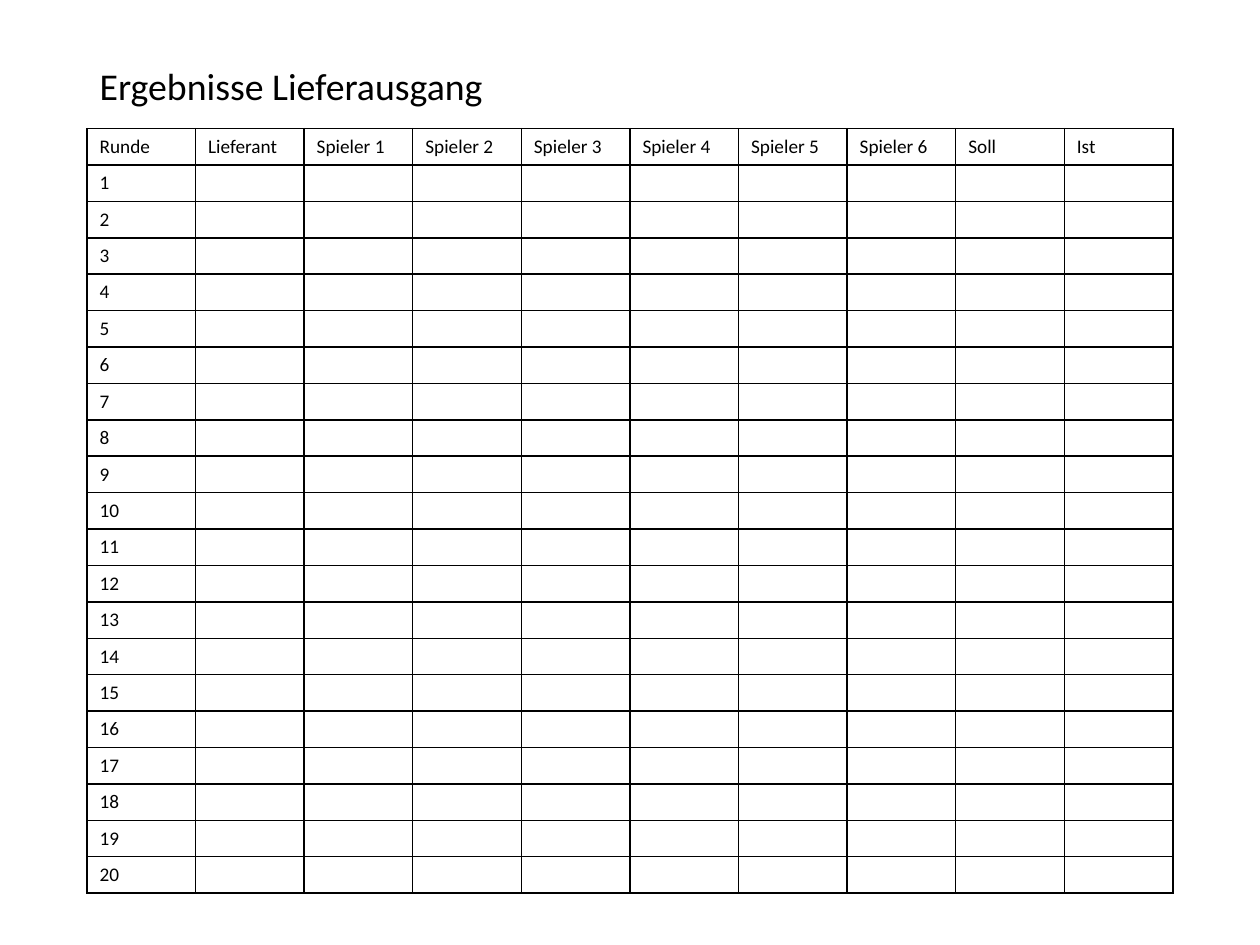
from lxml import etree
from pptx import Presentation
from pptx import util as u
from pptx.dml.color import RGBColor
from pptx.enum import text
from pptx.oxml import ns

BLACK = RGBColor(0, 0, 0)
WHITE = RGBColor(255, 255, 255)
TITLE_ONLY = 5

HEADINGS = ["Runde", "Lieferant",
            *(f"Spieler {player}" for player in range(1, 7)),
            "Soll", "Ist"]
ROUNDS = 20


class ScoreSheet:
    """Holds the style and the current slide."""

    font = "Calibri"
    left, width = u.Inches(0.69), u.Inches(8.62)

    def __init__(self, deck):
        self.page = deck.slides.add_slide(deck.slide_layouts[TITLE_ONLY])

    def style(self, para, size):
        para.font.name = self.font
        para.font.size = u.Pt(size)
        para.font.color.rgb = BLACK

    def title(self, wording, top, height):
        box = self.page.shapes.title
        box.left, box.top = self.left, u.Inches(top)
        box.width, box.height = self.width, u.Inches(height)
        frame = box.text_frame
        frame.text = wording
        frame.word_wrap = True
        frame.auto_size = text.MSO_AUTO_SIZE.NONE
        frame.vertical_anchor = text.MSO_ANCHOR.MIDDLE
        para = frame.paragraphs[0]
        para.alignment = text.PP_ALIGN.LEFT
        para.line_spacing = 0.9
        self.style(para, 21.6)

    def table(self, rows, top, height, row_height):
        frame = self.page.shapes.add_table(
            len(rows), len(rows[0]), self.left, u.Inches(top),
            self.width, u.Inches(height))
        table = frame.table
        table.first_row = table.horz_banding = False
        for row, wordings in zip(table.rows, rows):
            row.height = u.Inches(row_height)
            for cell, wording in zip(row.cells, wordings):
                self.cell(cell, wording, 11)
        frame.height = u.Inches(height)

    def cell(self, cell, wording, size):
        para = cell.text_frame.paragraphs[0]
        if wording:
            para.text = wording
        self.style(para, size)
        # The end mark keeps empty cells as low as filled ones
        etree.SubElement(para._p, ns.qn("a:endParaRPr"), sz=str(size * 100))
        self.borders(cell)
        cell.fill.solid()
        cell.fill.fore_color.rgb = WHITE

    def borders(self, cell, points=1):
        properties = cell._tc.get_or_add_tcPr()
        for side in ("lnL", "lnR", "lnT", "lnB"):
            line = etree.SubElement(properties, ns.qn(f"a:{side}"),
                                    w=str(u.Pt(points)))
            fill = etree.SubElement(line, ns.qn("a:solidFill"))
            etree.SubElement(fill, ns.qn("a:srgbClr"), val=str(BLACK))


def main():
    deck = Presentation()
    deck.slide_width, deck.slide_height = u.Inches(10), u.Inches(7.5)
    sheet = ScoreSheet(deck)

    # Title
    sheet.title("Ergebnisse Lieferausgang", top=0.55, height=0.3)

    # One heading row, then one numbered row per round
    blanks = [""] * (len(HEADINGS) - 1)
    rounds = [[str(number), *blanks] for number in range(1, ROUNDS + 1)]
    sheet.table([HEADINGS, *rounds], top=1.02, height=5.95, row_height=0.27)

    deck.save("out.pptx")


if __name__ == "__main__":
    main()
